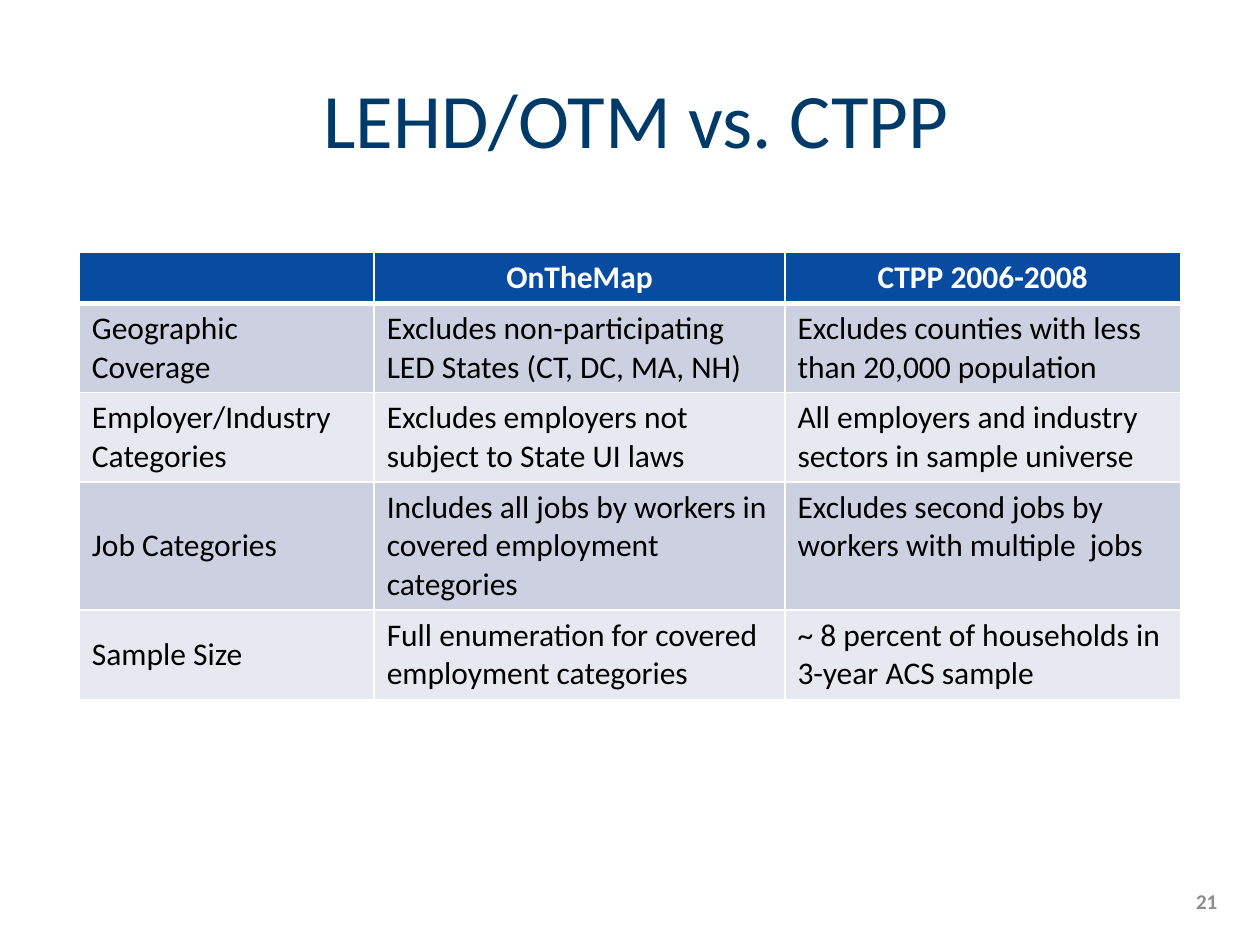
import lxml.etree
import pptx
import pptx.dml.color
import pptx.enum.text
import pptx.oxml.ns
import pptx.util

WIDTH, HEIGHT = pptx.util.Inches(10), pptx.util.Inches(7.5)
FONT = "Calibri"
COLORS = {
    "title": "003A69",
    "header": "084CA1",
    "odd": "CCD0E0",
    "even": "E7E9F0",
    "white": "FFFFFF",
    "body": "000000",
    "number": "8C8C8C",
}
ALIGN = pptx.enum.text.PP_ALIGN
ANCHOR = pptx.enum.text.MSO_ANCHOR

COLUMN_SHARES = (2.34, 3.26, 3.14)
ROW_LINES = (1, 2, 2, 3, 2)
COMPARISON = (
    ("", "OnTheMap", "CTPP 2006-2008"),
    ("Geographic Coverage",
     "Excludes non-participating LED States (CT, DC, MA, NH)",
     "Excludes counties with less than 20,000 population"),
    ("Employer/Industry Categories",
     "Excludes employers not subject to State UI laws",
     "All employers and industry sectors in sample universe"),
    ("Job Categories",
     "Includes all jobs by workers in covered employment categories",
     "Excludes second jobs by workers with multiple  jobs"),
    ("Sample Size",
     "Full enumeration for covered employment categories",
     "~ 8 percent of households in 3-year ACS sample"),
)


def rgb(name):
    """Return the palette colour of that name."""
    return pptx.dml.color.RGBColor.from_string(COLORS[name])


def share_box(left, top, width, height):
    """Turn shares of the slide into a box of lengths."""
    return (int(left * WIDTH), int(top * HEIGHT),
            int(width * WIDTH), int(height * HEIGHT))


def style(paragraph, size, color, align, bold=False):
    """Set the font and alignment of a paragraph."""
    paragraph.alignment = align
    paragraph.font.name = FONT
    paragraph.font.size = pptx.util.Pt(size)
    paragraph.font.bold = bold
    paragraph.font.color.rgb = rgb(color)


def add_line(slide, box, text, size, color, align, bold=False):
    """Place one vertically centred line of text in the box."""
    frame = slide.shapes.add_textbox(*box).text_frame
    frame.word_wrap = True
    frame.vertical_anchor = ANCHOR.MIDDLE
    frame.text = text
    style(frame.paragraphs[0], size, color, align, bold)


def add_borders(cell, bottom_points):
    """Draw white borders round a cell, ahead of its fill."""
    properties = cell._tc.get_or_add_tcPr()
    widths = {"lnL": 1, "lnR": 1, "lnT": 1, "lnB": bottom_points}
    for position, (side, points) in enumerate(widths.items()):
        border = lxml.etree.Element(pptx.oxml.ns.qn(f"a:{side}"),
                                    w=str(pptx.util.Pt(points)))
        fill = lxml.etree.SubElement(border, pptx.oxml.ns.qn("a:solidFill"))
        lxml.etree.SubElement(fill, pptx.oxml.ns.qn("a:srgbClr"),
                              val=COLORS["white"])
        properties.insert(position, border)


def add_comparison(slide, box):
    """Place the comparison table, its rows sized by their lines of text."""
    left, top, width, height = box
    table = slide.shapes.add_table(
        len(COMPARISON), len(COLUMN_SHARES), *box).table
    for column, share in zip(table.columns, COLUMN_SHARES):
        column.width = int(width * share / sum(COLUMN_SHARES))
    padding = pptx.util.Inches(0.1)
    line_height = (height - padding * len(ROW_LINES)) / sum(ROW_LINES)
    for row, lines in zip(table.rows, ROW_LINES):
        row.height = int(padding + line_height * lines)
    for r, texts in enumerate(COMPARISON):
        header = r == 0
        band = "header" if header else "odd" if r % 2 else "even"
        for c, text in enumerate(texts):
            cell = table.cell(r, c)
            cell.text = text
            cell.fill.solid()
            cell.fill.fore_color.rgb = rgb(band)
            add_borders(cell, 3 if header else 1)
            cell.vertical_anchor = (
                ANCHOR.MIDDLE if c == 0 and not header else ANCHOR.TOP)
            style(cell.text_frame.paragraphs[0], 18,
                  "white" if header else "body",
                  ALIGN.CENTER if header else ALIGN.LEFT, header)


def main():
    """Build the slide and save it."""
    deck = pptx.Presentation()
    deck.slide_width, deck.slide_height = WIDTH, HEIGHT
    slide = deck.slides.add_slide(deck.slide_layouts[6])
    add_line(slide, share_box(0.08, 0.04, 0.85, 0.17),
             "LEHD/OTM vs. CTPP", 44, "title", ALIGN.CENTER)
    add_comparison(slide, share_box(0.063, 0.267, 0.874, 0.473))
    add_line(slide, share_box(0.743, 0.927, 0.233, 0.053),
             "21", 12, "number", ALIGN.RIGHT, True)
    deck.save("out.pptx")


if __name__ == "__main__":
    main()
